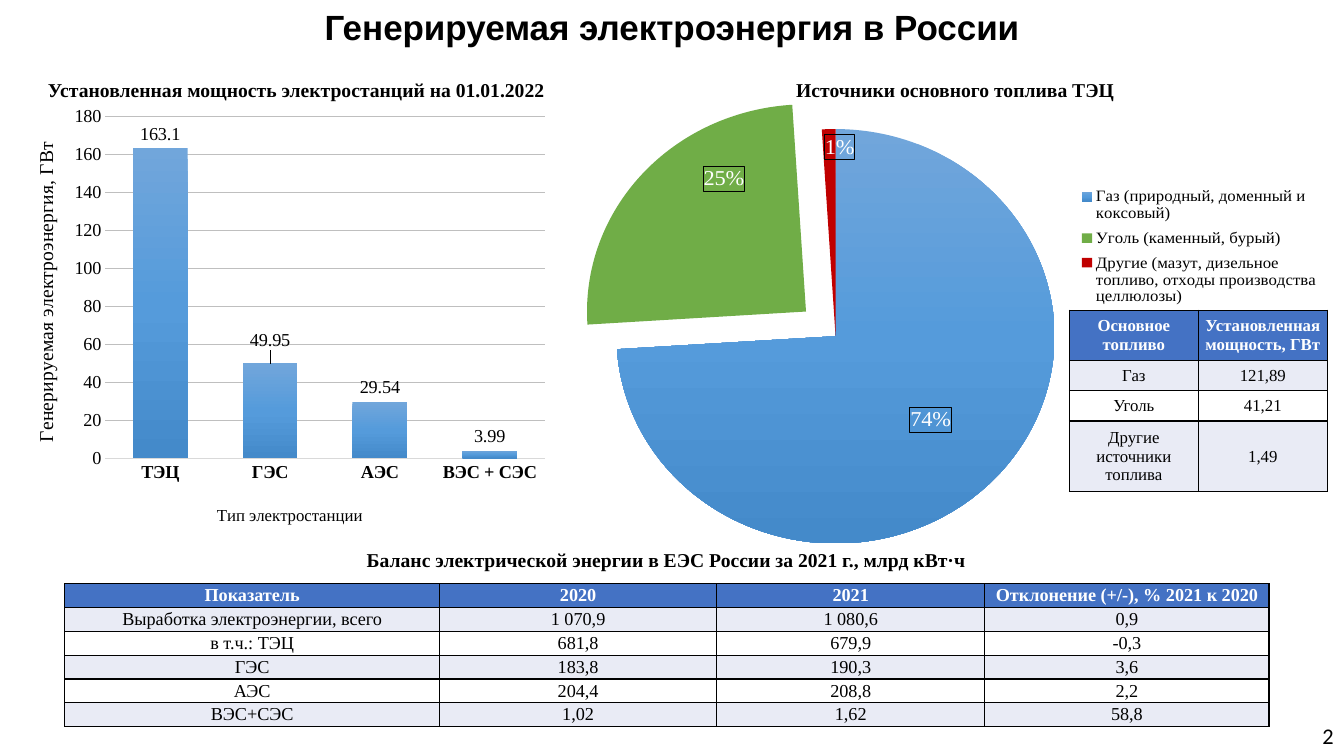
from lxml.etree import SubElement as Sub
from pptx import Presentation
from pptx.chart.data import CategoryChartData as Data
from pptx.dml.color import RGBColor as RGB
from pptx.enum.chart import XL_CHART_TYPE as Kind, XL_LABEL_POSITION as Pos
from pptx.enum.chart import XL_LEGEND_POSITION as Side, XL_TICK_MARK as Tick
from pptx.enum.text import MSO_ANCHOR as Anchor, PP_ALIGN as Align
from pptx.oxml import parse_xml
from pptx.oxml.ns import nsdecls, qn
from pptx.util import Cm, Pt

HUE = {"black": "000000", "white": "FFFFFF", "head": "4472C4", "band": "E9EBF5",
       "coal": "70AD47", "other": "C00000", "grid": "BFBFBF", "axis": "D9D9D9"}
FADE = [(0, "71A6DB"), (50, "559BDB"), (100, "448ACA")]
SERIF = "Times New Roman"

# Texts: wording, box in cm, size, font, bold, alignment, anchor
TEXTS = [
    ("2", (26.24, 18.03, 7.62, 1.02), 16, "Calibri", False, Align.RIGHT, Anchor.MIDDLE),
    ("Генерируемая электроэнергия в России", (0, 0, 33.87, 1.32), 25, "Arial", True,
     Align.CENTER, Anchor.MIDDLE),
    ("Баланс электрической энергии в ЕЭС России за 2021 г., млрд кВт·ч",
     (1.63, 13.69, 30.33, 0.86), 14, SERIF, True, Align.CENTER, Anchor.TOP),
    ("Установленная мощность электростанций на 01.01.2022",
     (0.56, 1.83, 13.82, 0.86), 14, SERIF, True, Align.CENTER, Anchor.TOP),
    ("Источники основного топлива ТЭЦ",
     (16.94, 1.83, 14.27, 0.86), 14, SERIF, True, Align.CENTER, Anchor.TOP),
]
POWER = {"ТЭЦ": 163.1, "ГЭС": 49.95, "АЭС": 29.54, "ВЭС + СЭС": 3.99}
FUEL = {"Газ (природный, доменный и коксовый)": 74,
        "Уголь (каменный, бурый)": 25,
        "Другие (мазут, дизельное топливо, отходы производства целлюлозы)": 1}
SHIFT = [(0.02, 0.03), (0, -0.15), (0.01, -0.2)]
# Tables: left, top, column widths, row heights, size, rows
TABLES = [
    (26.95, 7.82, [3.25, 3.25], [1.27, 0.76, 0.76, 1.78], 12, [
        ("Основное топливо", "Установленная мощность, ГВт"),
        ("Газ", "121,89"),
        ("Уголь", "41,21"),
        ("Другие источники топлива", "1,49")]),
    (1.63, 14.71, [9.45, 6.98, 6.76, 7.16], [0.6] * 6, 13, [
        ("Показатель", "2020", "2021", "Отклонение (+/-), % 2021 к 2020"),
        ("Выработка электроэнергии, всего", "1 070,9", "1 080,6", "0,9"),
        ("в т.ч.: ТЭЦ", "681,8", "679,9", "-0,3"),
        ("ГЭС", "183,8", "190,3", "3,6"),
        ("АЭС", "204,4", "208,8", "2,2"),
        ("ВЭС+СЭС", "1,02", "1,62", "58,8")]),
]


def color(name):
    return RGB.from_string(HUE[name])


def style(font, size, hue="black", bold=False, face=SERIF):
    font.size, font.name, font.bold = Pt(size), face, bold
    font.color.rgb = color(hue)


def place(node, at, **parts):
    """Give a chart part a manual layout as its child number `at`."""
    for old in node.findall(qn("c:layout")):
        node.remove(old)
    tree = parse_xml(f"<c:layout {nsdecls('c')}><c:manualLayout/></c:layout>")
    for key, val in parts.items():
        Sub(tree[0], qn("c:" + key)).set("val", str(val))
    node.insert(at, tree)


def fade(fill):
    fill.gradient()
    fill.gradient_angle = 270


def stops(chart):
    for group in chart._chartSpace.iter(qn("a:gsLst")):
        for old in list(group):
            group.remove(old)
        for at, hue in FADE:
            stop = Sub(group, qn("a:gs"), pos=str(at * 1000))
            Sub(stop, qn("a:srgbClr"), val=hue)


def add_chart(kind, box, values, size):
    data = Data()
    data.categories = list(values)
    data.add_series("Series 1", list(values.values()))
    chart = slide.shapes.add_chart(kind, *map(Cm, box), data).chart
    chart.has_title = chart.has_legend = False
    style(chart.font, size)
    return chart, chart.plots[0], chart.plots[0].series[0]


def name_axis(axis, text, size, x, y):
    title = axis.axis_title
    para = title.text_frame.paragraphs[0]
    para.text = text
    style(para.font, size)
    place(title._element, 1, xMode="edge", yMode="edge", x=x, y=y)
    return title


deck = Presentation()
deck.slide_width, deck.slide_height = Cm(33.87), Cm(19.05)
slide = deck.slides.add_slide(deck.slide_layouts[6])

# Headings and page number
for text, box, size, face, bold, align, anchor in TEXTS:
    frame = slide.shapes.add_textbox(*map(Cm, box)).text_frame
    frame.word_wrap, frame.vertical_anchor = True, anchor
    para = frame.paragraphs[0]
    para.text, para.alignment = text, align
    style(para.font, size, bold=bold, face=face)

# Column chart: installed power
chart, plot, bars = add_chart(Kind.COLUMN_CLUSTERED, (0.33, 2.49, 13.67, 11.05), POWER, 13)
plot.gap_width, plot.overlap, plot.vary_by_categories = 100, -24, False
fade(bars.format.fill)
stops(chart)
cat, val = chart.category_axis, chart.value_axis
for axis in (cat, val):
    axis.major_tick_mark = axis.minor_tick_mark = Tick.NONE
    style(axis.tick_labels.font, 13, bold=axis is cat)
cat.format.line.color.rgb, cat.format.line.width = color("axis"), Pt(1)
val.format.line.fill.background()
val.minimum_scale, val.maximum_scale, val.major_unit = 0, 180, 20
grid = val.major_gridlines.format.line
grid.color.rgb, grid.width = color("grid"), Pt(0.75)
name_axis(cat, "Тип электростанции", 12, 0.37, 0.92)
side = name_axis(val, "Генерируемая электроэнергия, ГВт", 14, 0.03, 0.09)
side._element.find(".//" + qn("a:bodyPr")).set("rot", "-5400000")
place(chart._chartSpace.chart.plotArea, 0, layoutTarget="inner", xMode="edge",
      yMode="edge", x=0.17, y=0.04, w=0.81, h=0.78)
raised = bars.points[1].data_label
for label in (bars.data_labels, raised):
    style(label.font, 13)
    label.position = Pos.OUTSIDE_END
bars.data_labels.show_value = True
place(raised._get_or_add_dLbl(), 1, x=0, y=-0.02)

# Pie chart: fuel shares
chart, plot, pie = add_chart(Kind.PIE, (14.38, 2.64, 19.08, 11.38), FUEL, 10)
plot.vary_by_categories = True
place(chart._chartSpace.chart.plotArea, 0, layoutTarget="inner", xMode="edge",
      yMode="edge", x=0, y=0, w=0.7, h=0.97)
chart.has_legend = True
legend = chart.legend
legend.position, legend.include_in_layout = Side.CORNER, False
style(legend.font, 12)
place(legend._element, 1, xMode="edge", yMode="edge", x=0.66, y=0.12, w=0.34, h=0.31)
shares = pie.data_labels
shares.show_value, shares.show_percentage = False, True
style(shares.font, 16, "white")
for i, (hue, (x, y)) in enumerate(zip((None, "coal", "other"), SHIFT)):
    point = pie.points[i]
    if hue:
        point.format.fill.solid()
        point.format.fill.fore_color.rgb = color(hue)
    else:
        fade(point.format.fill)
    label = point.data_label
    style(label.font, 16, "white")
    label.position = Pos.CENTER
    node = label._get_or_add_dLbl()
    node.find(qn("c:showVal")).set("val", "0")
    node.find(qn("c:showPercent")).set("val", "1")
    node.find(qn("c:txPr")).addprevious(parse_xml(
        f'<c:spPr {nsdecls("c", "a")}><a:noFill/><a:ln w="9525"><a:solidFill>'
        f'<a:srgbClr val="{HUE["black"]}"/></a:solidFill></a:ln></c:spPr>'))
    place(node, 1, x=x, y=y)
stops(chart)
# Coal slice stands apart
coal = pie._element.findall(qn("c:dPt"))[1]
for old in coal.findall(qn("c:explosion")):
    coal.remove(old)
apart = parse_xml(f'<c:explosion {nsdecls("c")} val="18"/>')
coal.find(qn("c:spPr")).addprevious(apart)

# Tables
for left, top, wide, high, size, rows in TABLES:
    table = slide.shapes.add_table(len(rows), len(wide), Cm(left), Cm(top),
                                   Cm(sum(wide)), Cm(sum(high))).table
    for col, width in zip(table.columns, wide):
        col.width = Cm(width)
    for r, row in enumerate(rows):
        table.rows[r].height = Cm(high[r])
        for c, text in enumerate(row):
            cell = table.cell(r, c)
            cell.margin_left = cell.margin_right = cell.margin_top = cell.margin_bottom = 0
            cell.vertical_anchor = Anchor.MIDDLE
            para = cell.text_frame.paragraphs[0]
            para.text, para.alignment = text, Align.CENTER
            style(para.font, size, "black" if r else "white", bold=r == 0)
            props = cell._tc.get_or_add_tcPr()
            for edge in ("lnL", "lnR", "lnT", "lnB"):
                line = Sub(props, qn("a:" + edge), w=str(Pt(1)))
                Sub(Sub(line, qn("a:solidFill")), qn("a:srgbClr"), val=HUE["black"])
            cell.fill.solid()
            cell.fill.fore_color.rgb = color(("white", "band")[r % 2] if r else "head")

deck.save("out.pptx")
